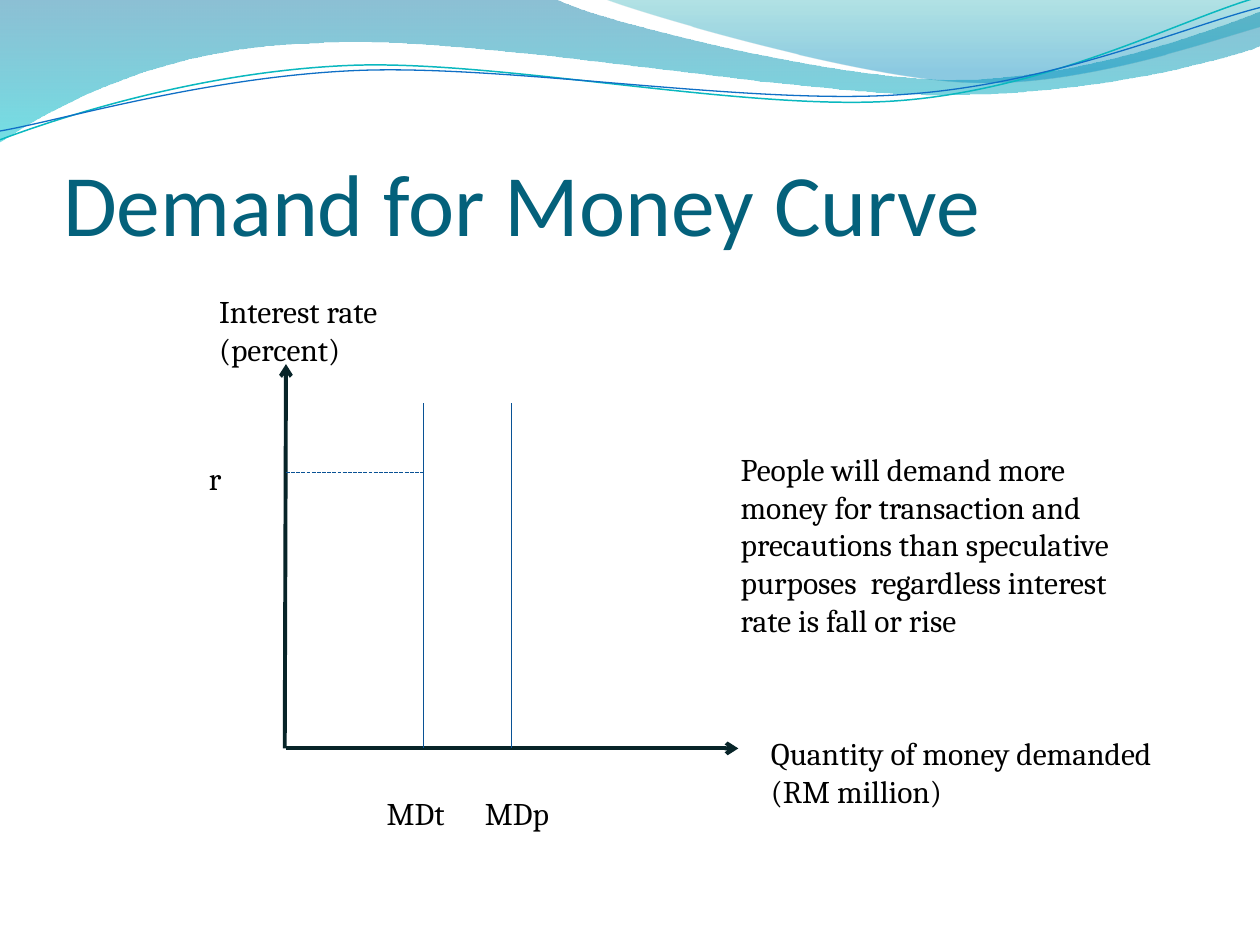
from dataclasses import dataclass

from lxml import etree
from pptx import Presentation
from pptx.dml.color import RGBColor
from pptx.enum import dml, shapes, text
from pptx.oxml import ns
from pptx.util import Inches, Pt

COLORS = {
    "title": "04617B", "body": "000000", "axis": "072428", "curve": "095295",
    "teal": "0AB8BF", "blue": "0F6FC6",
    "band_top": "0074A1", "band_bottom": "00C6CF",
    "crest_top": "00A1A9", "crest_bottom": "008BBF",
}
ORIGIN_X, ORIGIN_Y = 2.27, 5.94
MDT_X, MDP_X = 3.36, 4.06
CURVE_TOP, RATE_Y = 3.2, 3.75

Point = tuple[float, float]


@dataclass
class Stop:
    position: float
    color: str
    alpha: int


@dataclass
class Wave:
    """Outline from start; two-number segments are lines, six-number ones are Béziers."""
    start: Point
    segments: list[tuple[float, ...]]
    stops: tuple[Stop, ...] = ()
    line: str = ""
    width: float = 0


@dataclass
class Rule:
    start: Point
    end: Point
    color: str = "curve"
    width: float = 0.75
    arrow: bool = False
    dashed: bool = False


@dataclass
class Label:
    lines: list[str]
    left: float
    top: float
    width: float
    height: float = 0.4
    wrap: bool = True


WAVES = [
    Wave((0, 0), [
        (4.4, -0.01),
        (4.76, 0.17, 6.64, 0.63, 7.58, 0.63), (8.53, 0.63, 9.58, 0.26, 10, 0.09),
        (10.01, 0.36),
        (9.83, 0.44, 8.7, 0.76, 7.46, 0.75), (6.22, 0.75, 3.82, 0.28, 2.57, 0.34),
        (1.29, 0.36, 0.46, 0.83, -0.01, 1.13),
        (0, 0),
    ], stops=(Stop(0, "band_top", 45), Stop(1, "band_bottom", 55))),
    Wave((4.79, -0.01), [
        (5.09, 0.11, 6.82, 0.62, 7.69, 0.65), (8.56, 0.69, 9.61, 0.32, 10, 0.21),
        (10, 0),
        (4.79, -0.01),
    ], stops=(Stop(0, "crest_top", 30), Stop(0.8, "crest_bottom", 45))),
    Wave((0, 1.11), [
        (0.48, 0.93, 1.58, 0.57, 2.77, 0.52), (3.95, 0.47, 5.93, 0.89, 7.13, 0.8),
        (8.33, 0.71, 9.38, 0.15, 9.98, -0.02),
    ], line="teal", width=0.85),
    Wave((0, 1.04), [
        (0.47, 0.96, 1.64, 0.61, 2.83, 0.56), (4.03, 0.51, 5.97, 0.84, 7.17, 0.75),
        (8.36, 0.67, 9.41, 0.21, 10, 0.06),
    ], line="blue", width=0.75),
]
RULES = [
    Rule((ORIGIN_X, ORIGIN_Y), (5.86, ORIGIN_Y), "axis", 2.25, arrow=True),
    Rule((2.26, ORIGIN_Y), (ORIGIN_X, 2.89), "axis", 2.25, arrow=True),
    Rule((MDT_X, CURVE_TOP), (MDT_X, ORIGIN_Y)),
    Rule((MDP_X, CURVE_TOP), (MDP_X, ORIGIN_Y)),
    Rule((ORIGIN_X, RATE_Y), (MDT_X, RATE_Y), dashed=True),
]
LABELS = [
    Label(["Interest rate (percent)"], 1.64, 2.27, 1.64, 0.71),
    Label(["Quantity of money demanded", "(RM million)"], 6.02, 5.78, 3.48, 0.71, wrap=False),
    Label(["MDt"], 2.97, 6.25, 0.78),
    Label(["MDp"], 3.75, 6.25, 0.78),
    Label(["r"], 1.56, 3.59, 0.47),
    Label(["People will demand more money for transaction and precautions than "
           "speculative purposes  regardless interest rate is fall or rise"],
          5.78, 3.52, 3.36, 1.62),
]


def rgb(name: str) -> RGBColor:
    return RGBColor.from_string(COLORS[name])


def bend_segments(shape, segments: list[tuple[float, ...]]) -> None:
    """Join the three line steps of each Bézier segment into one curve."""
    steps = iter(list(shape.element.spPr.iter(ns.qn("a:lnTo"))))
    for segment in segments:
        first = next(steps)
        if len(segment) == 2:
            continue
        curve = etree.Element(ns.qn("a:cubicBezTo"))
        first.addprevious(curve)
        for step in (first, next(steps), next(steps)):
            curve.append(step[0])
            step.getparent().remove(step)


def draw_wave(slide, wave: Wave) -> None:
    builder = slide.shapes.build_freeform(*map(Inches, wave.start))
    points = [(Inches(x), Inches(y)) for segment in wave.segments
              for x, y in zip(segment[::2], segment[1::2])]
    builder.add_line_segments(points, close=bool(wave.stops))
    shape = builder.convert_to_shape()
    bend_segments(shape, wave.segments)
    shape.shadow.inherit = False
    if not wave.stops:
        shape.fill.background()
        shape.line.color.rgb = rgb(wave.line)
        shape.line.width = Pt(wave.width)
        return
    shape.line.fill.background()
    shape.fill.gradient()
    shape.fill.gradient_angle = 270
    for gradient_stop, stop in zip(shape.fill.gradient_stops, wave.stops):
        gradient_stop.position = stop.position
        gradient_stop.color.rgb = rgb(stop.color)
    for color, stop in zip(shape.element.spPr.iter(ns.qn("a:srgbClr")), wave.stops):
        etree.SubElement(color, ns.qn("a:alpha"), val=str(stop.alpha * 1000))


def draw_rule(slide, rule: Rule) -> None:
    connector = slide.shapes.add_connector(
        shapes.MSO_CONNECTOR.STRAIGHT, *map(Inches, rule.start + rule.end))
    connector.line.color.rgb = rgb(rule.color)
    connector.line.width = Pt(rule.width)
    if rule.dashed:
        connector.line.dash_style = dml.MSO_LINE.SQUARE_DOT
    if rule.arrow:
        outline = connector.element.spPr.find(ns.qn("a:ln"))
        etree.SubElement(outline, ns.qn("a:tailEnd"), type="arrow")
    etree.SubElement(connector.element.spPr, ns.qn("a:effectLst"))


def draw_label(slide, label: Label) -> None:
    box = slide.shapes.add_textbox(
        *map(Inches, (label.left, label.top, label.width, label.height)))
    frame = box.text_frame
    frame.word_wrap = label.wrap
    frame.auto_size = text.MSO_AUTO_SIZE.SHAPE_TO_FIT_TEXT
    frame.text = "\n".join(label.lines)
    for paragraph in frame.paragraphs:
        paragraph.font.name = "Cambria"
        paragraph.font.size = Pt(18)
        paragraph.font.color.rgb = rgb("body")


def set_title(slide, wording: str) -> None:
    title = slide.shapes.title
    title.left, title.top, title.width, title.height = map(Inches, (0.5, 0.77, 9, 1.25))
    frame = title.text_frame
    frame.text = wording
    frame.vertical_anchor = text.MSO_ANCHOR.BOTTOM
    frame.auto_size = text.MSO_AUTO_SIZE.NONE
    frame.margin_left = frame.margin_right = frame.margin_bottom = 0
    frame.margin_top = Inches(0.05)
    heading = frame.paragraphs[0]
    heading.alignment = text.PP_ALIGN.LEFT
    heading.font.name = "Calibri"
    heading.font.size = Pt(50)
    heading.font.color.rgb = rgb("title")


def main() -> None:
    deck = Presentation()
    deck.slide_width, deck.slide_height = Inches(10), Inches(7.5)
    slide = deck.slides.add_slide(deck.slide_layouts[5])
    set_title(slide, "Demand for Money Curve")
    for wave in WAVES:
        draw_wave(slide, wave)
    for rule in RULES:
        draw_rule(slide, rule)
    for label in LABELS:
        draw_label(slide, label)
    deck.save("out.pptx")


if __name__ == "__main__":
    main()
